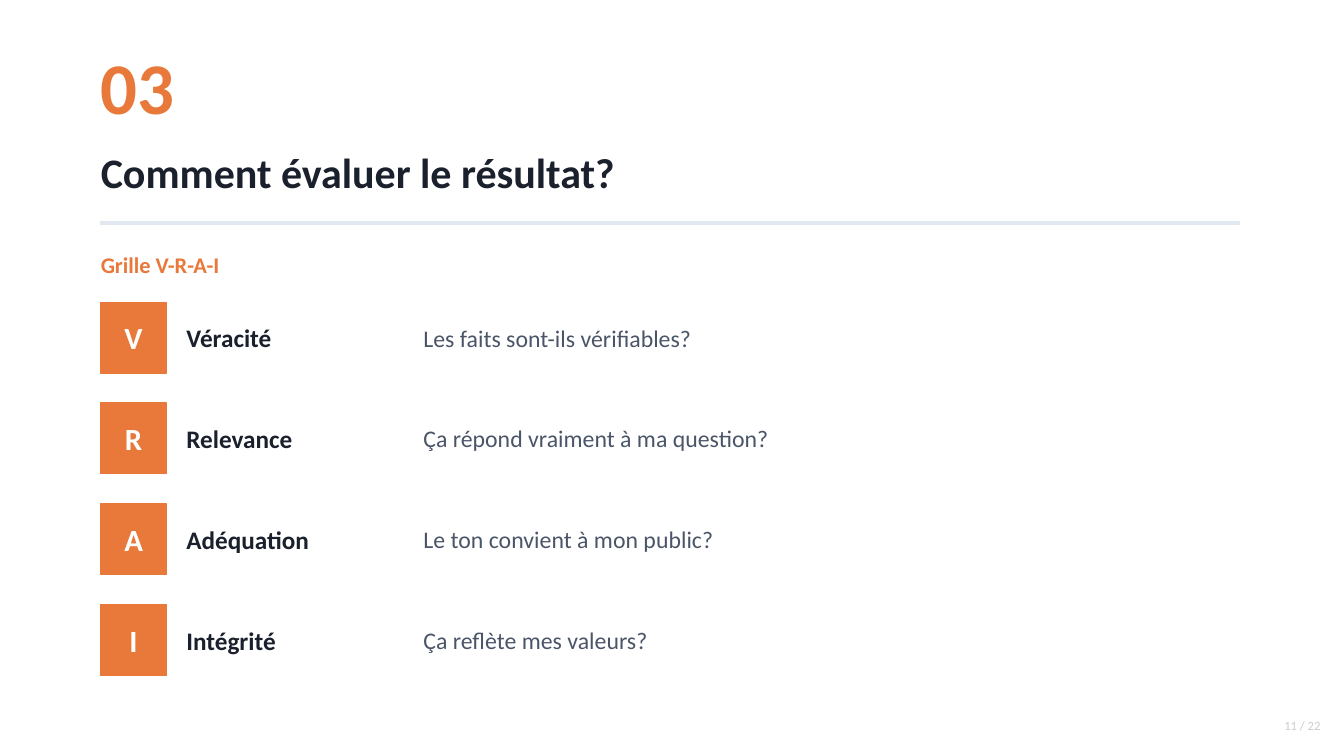
from pptx import Presentation
from pptx.dml.color import RGBColor
from pptx.enum.shapes import MSO_SHAPE
from pptx.enum.text import MSO_ANCHOR, PP_ALIGN
from pptx.util import Pt

RECT = MSO_SHAPE.RECTANGLE
MIDDLE = MSO_ANCHOR.MIDDLE
LEFT, CENTER, RIGHT = PP_ALIGN.LEFT, PP_ALIGN.CENTER, PP_ALIGN.RIGHT

FONT = "Calibri"
COLORS = {
    "accent": "E8793A",
    "dark": "1A202C",
    "body": "4A5568",
    "rule": "E2E8F0",
    "page": "CCCCCC",
    "white": "FFFFFF",
}

NUMBER = "03"
TITLE = "Comment évaluer le résultat?"
GRID = "Grille V-R-A-I"
PAGE = "11 / 22"
ROWS = [
    ("Véracité", "Les faits sont-ils vérifiables?"),
    ("Relevance", "Ça répond vraiment à ma question?"),
    ("Adéquation", "Le ton convient à mon public?"),
    ("Intégrité", "Ça reflète mes valeurs?"),
]

EDGE, WIDTH = 72, 813.6
TOP, STEP, HIGH = 216, 72, 50.4
TILE = 46.8
NAME_X, NAME_W = 133.2, 158.4
ASK_X = 302.4

deck = Presentation()
deck.slide_width, deck.slide_height = Pt(960), Pt(540)
slide = deck.slides.add_slide(deck.slide_layouts[6])


def color(key):
    return RGBColor.from_string(COLORS[key])


def write(text, box, size, tint, bold=False, align=LEFT, shape=None):
    if shape is None:
        shape = slide.shapes.add_textbox(*map(Pt, box))
    frame = shape.text_frame
    frame.word_wrap = True
    frame.vertical_anchor = MIDDLE
    frame.margin_left = frame.margin_right = 0
    frame.margin_top = frame.margin_bottom = 0
    para = frame.paragraphs[0]
    para.alignment = align
    run = para.add_run()
    run.text = text
    run.font.name = FONT
    run.font.size = Pt(size)
    run.font.bold = bold
    run.font.color.rgb = color(tint)


def block(box, tint):
    shape = slide.shapes.add_shape(RECT, *map(Pt, box))
    shape.shadow.inherit = False
    shape.fill.solid()
    shape.fill.fore_color.rgb = color(tint)
    shape.line.color.rgb = color(tint)
    shape.line.width = Pt(1)
    return shape


write(NUMBER, (EDGE, 21.6, 86.4, 79.2), 52, "accent", bold=True)
write(TITLE, (EDGE, 93.6, WIDTH, 57.6), 30, "dark", bold=True)
block((EDGE, 158.4, WIDTH, 2.16), "rule")
write(GRID, (EDGE, 172.8, 432, 32.4), 16, "accent", bold=True)

for i, (name, ask) in enumerate(ROWS):
    y = TOP + i * STEP
    box = (EDGE, y, TILE, HIGH)
    tile = block(box, "accent")
    write(name[0], box, 22, "white", bold=True, align=CENTER, shape=tile)
    write(name, (NAME_X, y, NAME_W, HIGH), 18, "dark", bold=True)
    write(ask, (ASK_X, y, EDGE + WIDTH - ASK_X, HIGH), 17, "body")

write(PAGE, (871.2, 507.6, 72, 21.6), 9, "page", align=RIGHT)

deck.save("out.pptx")
